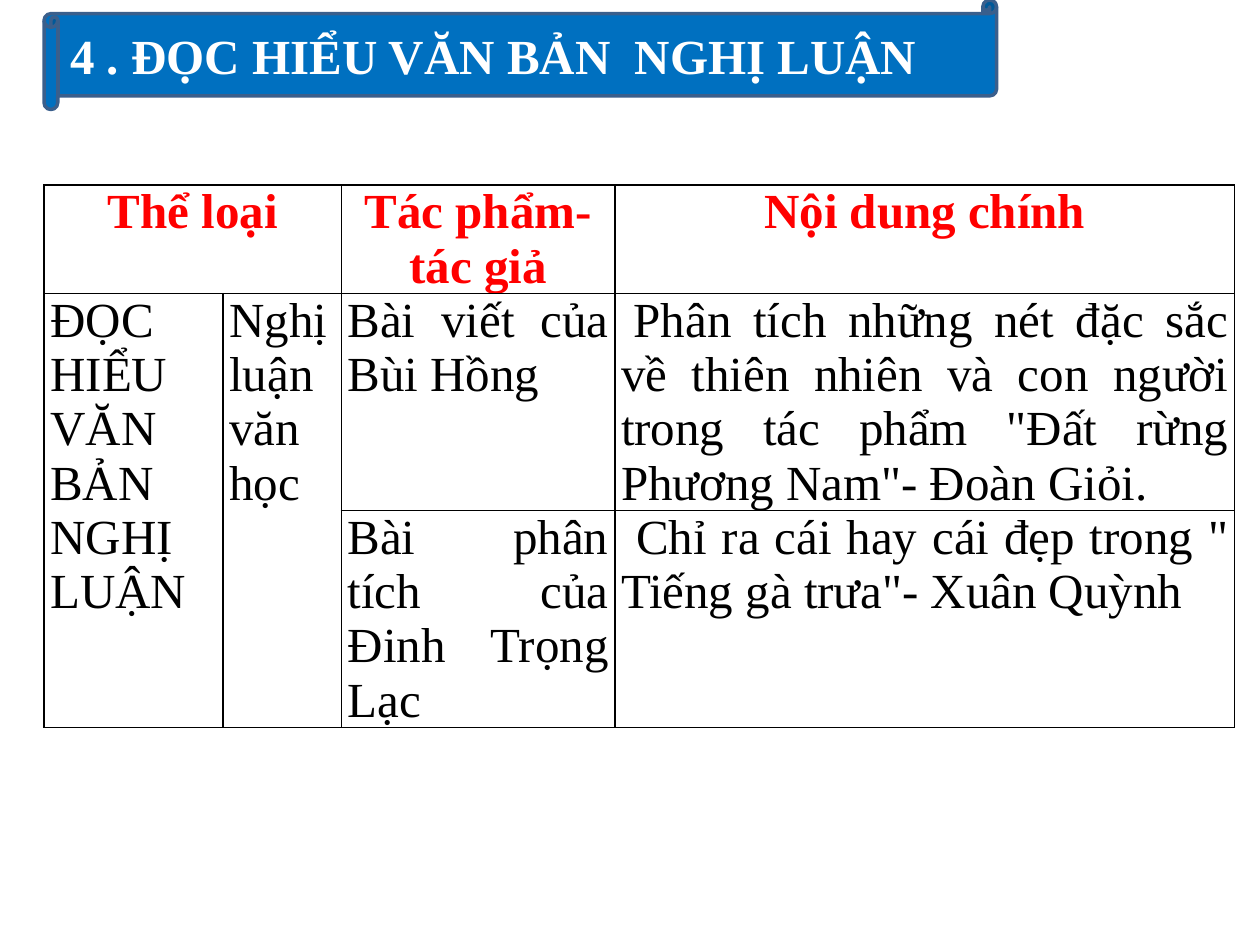
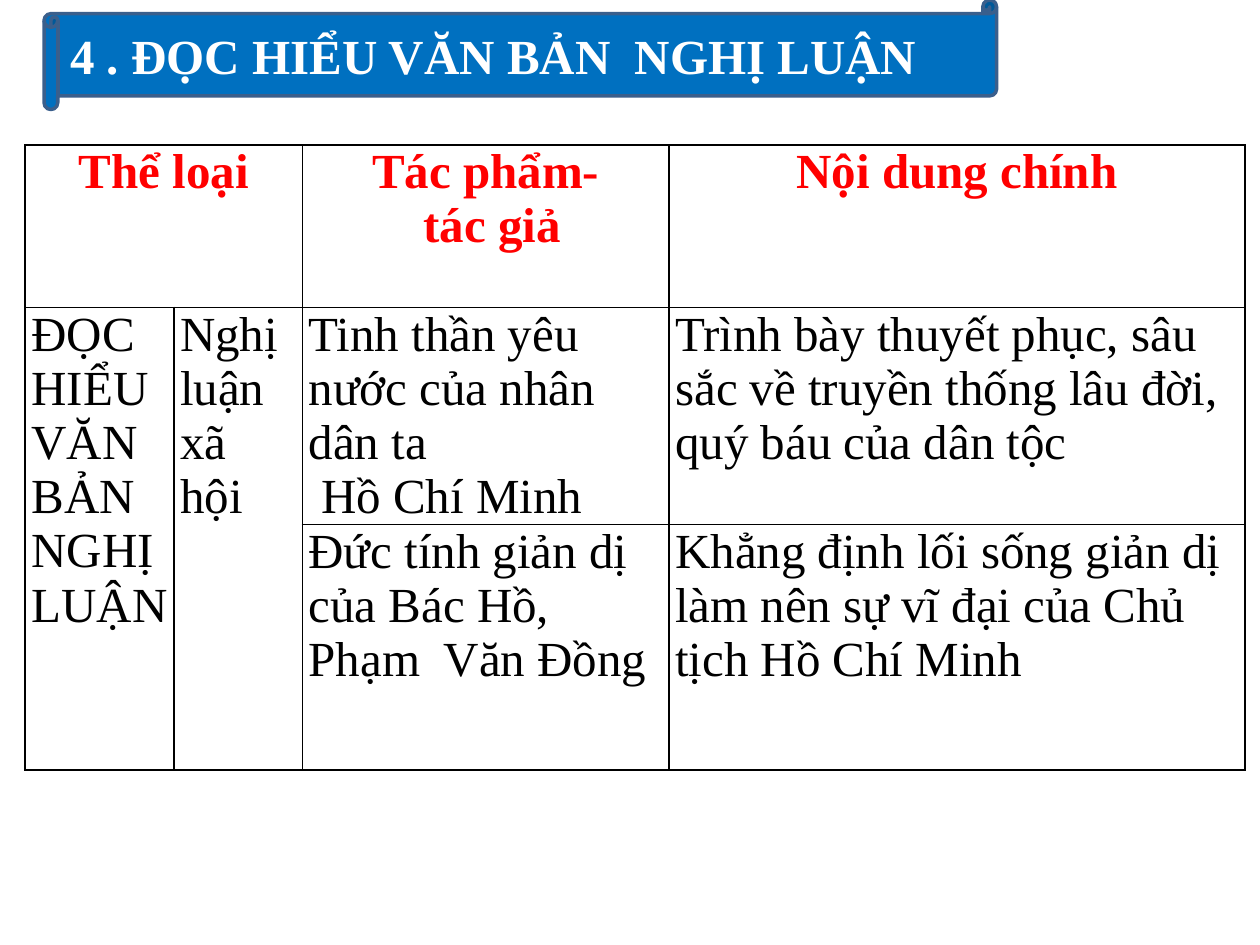
"""Build two slides that review argumentative reading texts."""
from dataclasses import dataclass

from lxml import etree
from pptx import Presentation
from pptx import util as u
from pptx.dml.color import RGBColor
from pptx.enum import shapes, text
from pptx.oxml.ns import qn

PX = 9144
LEFT = text.PP_ALIGN.LEFT
CENTER = text.PP_ALIGN.CENTER
JUSTIFY = text.PP_ALIGN.JUSTIFY


@dataclass(frozen=True)
class Theme:
    """Colours, font and sizes shared by the slides."""
    font: str = "Times New Roman"
    size: int = 28
    band: str = "0070C0"
    band_line: str = "3A5F8C"
    band_line_width: int = 2
    paper: str = "FFFFFF"
    heading: str = "FF0000"
    ink: str = "000000"
    border_width: int = 1
    cell_inset: int = 5


@dataclass(frozen=True)
class Line:
    """One paragraph of a cell with its first-line indent in px."""
    words: str
    indent: int = 0


class Board:
    """Draws styled elements on the current slide."""

    def __init__(self, deck, theme):
        """Keep the deck and the style."""
        self.deck = deck
        self.theme = theme
        self.page = None

    def new_page(self):
        """Start a blank slide."""
        self.page = self.deck.slides.add_slide(self.deck.slide_layouts[6])

    def add_words(self, para, words, color, bold, align):
        """Add one styled run to a paragraph."""
        para.alignment = align
        span = para.add_run()
        span.text = words
        span.font.name = self.theme.font
        span.font.size = u.Pt(self.theme.size)
        span.font.bold = bold
        span.font.color.rgb = RGBColor.from_string(color)

    def title(self, words):
        """Draw the scroll band with the title."""
        theme = self.theme
        box = self.page.shapes.add_shape(
            shapes.MSO_SHAPE.HORIZONTAL_SCROLL, 35 * PX, 0, 756 * PX, 87 * PX)
        box.shadow.inherit = False
        box.fill.solid()
        box.fill.fore_color.rgb = RGBColor.from_string(theme.band)
        box.line.color.rgb = RGBColor.from_string(theme.band_line)
        box.line.width = u.Pt(theme.band_line_width)
        frame = box.text_frame
        frame.word_wrap = True
        frame.vertical_anchor = text.MSO_ANCHOR.MIDDLE
        self.add_words(frame.paragraphs[0], words, theme.paper, True, LEFT)

    def border(self, cell):
        """Rule all four sides of a cell."""
        props = cell._tc.get_or_add_tcPr()
        for side in ("lnL", "lnR", "lnT", "lnB"):
            rule = etree.SubElement(
                props, qn(f"a:{side}"), w=str(u.Pt(self.theme.border_width)))
            fill = etree.SubElement(rule, qn("a:solidFill"))
            etree.SubElement(fill, qn("a:srgbClr"), val=self.theme.ink)

    def fill_cell(self, cell, lines, color, bold, align):
        """Set the paragraphs of a cell."""
        frame = cell.text_frame
        for index, line in enumerate(lines):
            para = frame.add_paragraph() if index else frame.paragraphs[0]
            if line.indent:
                props = para._p.get_or_add_pPr()
                props.set("marL", "0")
                props.set("indent", str(line.indent * PX))
            self.add_words(para, line.words, color, bold, align)

    def table(self, left, top, widths, heights, rows, body_align):
        """Draw the ruled table with its merged heading and side cells."""
        theme = self.theme
        grid = self.page.shapes.add_table(
            len(heights), len(widths), left * PX, top * PX,
            sum(widths) * PX, sum(heights) * PX).table
        grid.first_row = grid.horz_banding = False
        for column, width in zip(grid.columns, widths):
            column.width = width * PX
        for row, height in zip(grid.rows, heights):
            row.height = height * PX
        for cell in grid.iter_cells():
            cell.margin_left = cell.margin_right = theme.cell_inset * PX
            cell.margin_top = cell.margin_bottom = 0
            self.border(cell)
            cell.fill.solid()
            cell.fill.fore_color.rgb = RGBColor.from_string(theme.paper)
        grid.cell(0, 0).merge(grid.cell(0, 1))
        for side in (0, 1):
            grid.cell(1, side).merge(grid.cell(2, side))
        for r, row in enumerate(rows):
            for c, lines in enumerate(row):
                if r == 0:
                    look = theme.heading, True, CENTER
                else:
                    look = theme.ink, False, body_align if c else JUSTIFY
                self.fill_cell(grid.cell(r, c), lines, *look)


TITLE = "4 . ĐỌC HIỂU VĂN BẢN  NGHỊ LUẬN"
TOPIC = [Line("ĐỌC HIỂU VĂN BẢN NGHỊ LUẬN")]


def headings(author_indent):
    """Return the heading row."""
    return [[Line("Thể loại")], [],
            [Line("Tác phẩm-"), Line("tác giả", author_indent)],
            [Line("Nội dung chính")]]


LITERARY = [
    headings(0),
    [TOPIC, [Line("Nghị luận văn học")], [Line("Bài viết của Bùi Hồng")],
     [Line("Phân tích những nét đặc sắc về thiên nhiên và con người trong "
           'tác phẩm "Đất rừng Phương Nam"- Đoàn Giỏi.', 10)]],
    [[], [], [Line("Bài phân tích của Đinh Trọng Lạc")],
     [Line('Chỉ ra cái hay cái đẹp trong " Tiếng gà trưa"- Xuân Quỳnh', 12)]],
]
SOCIAL = [
    headings(10),
    [TOPIC, [Line("Nghị luận xã hội")],
     [Line("Tinh thần yêu nước của nhân dân ta"), Line("Hồ Chí Minh", 10)],
     [Line("Trình bày thuyết phục, sâu sắc về truyền thống lâu đời, "
           "quý báu của dân tộc")]],
    [[], [], [Line("Đức tính giản dị của Bác Hồ, Phạm  Văn Đồng")],
     [Line("Khẳng định lối sống giản dị làm nên sự vĩ đại của "
           "Chủ tịch Hồ Chí Minh")]],
]
TABLES = [
    (35, 147, (142, 94, 217, 492), (86, 172, 147), LITERARY, JUSTIFY),
    (20, 115, (118, 102, 291, 457), (129, 172, 195), SOCIAL, LEFT),
]


def main():
    """Build and save the deck."""
    deck = Presentation()
    deck.slide_width, deck.slide_height = 1000 * PX, 750 * PX
    board = Board(deck, Theme())
    for table in TABLES:
        board.new_page()
        board.title(TITLE)
        board.table(*table)
    deck.save("out.pptx")


if __name__ == "__main__":
    main()
